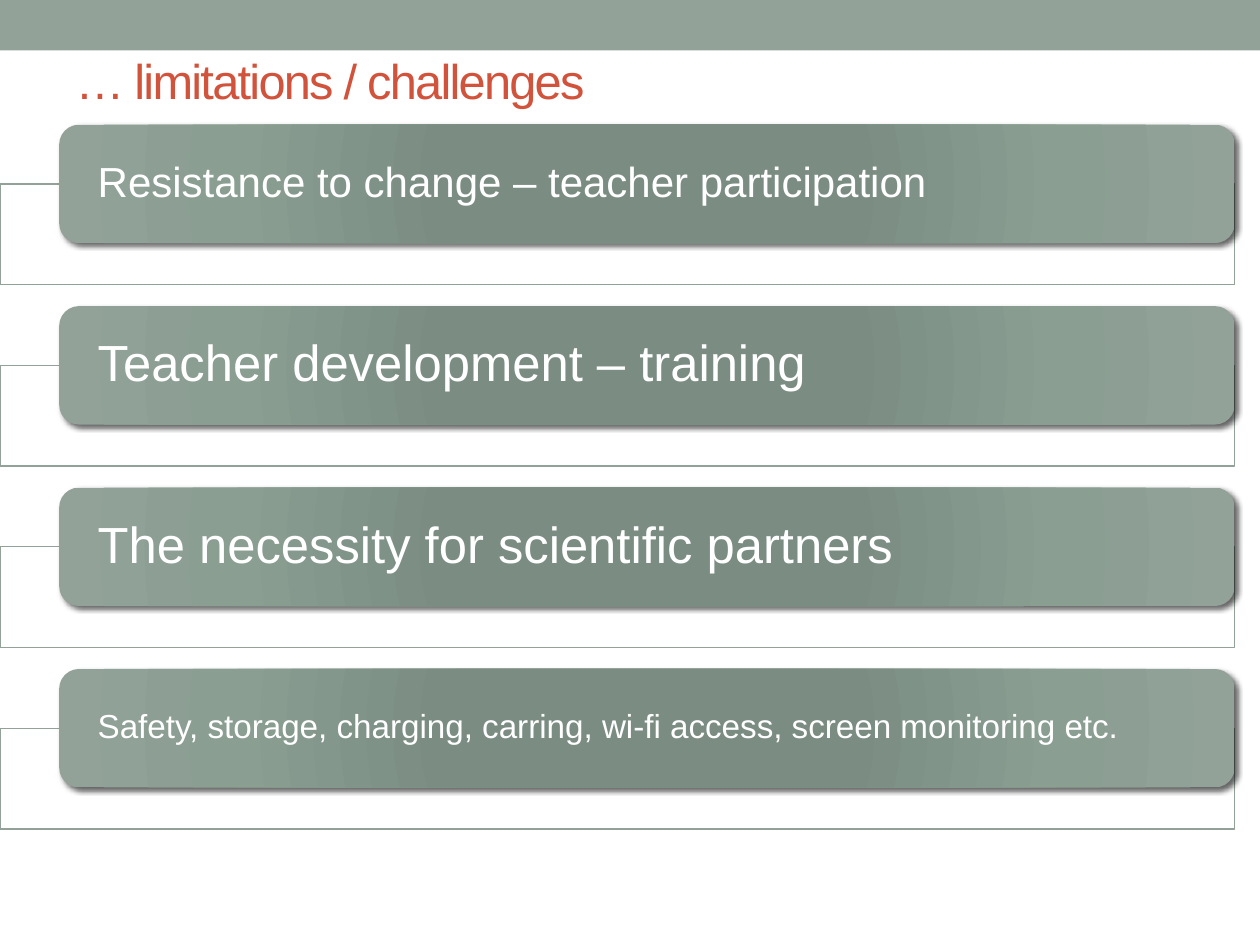
from pptx import Presentation
from pptx.dml.color import RGBColor
from pptx.enum.shapes import MSO_SHAPE as Shape
from pptx.enum.text import MSO_ANCHOR as Anchor, MSO_AUTO_SIZE as AutoSize, PP_ALIGN as Align
from pptx.oxml import parse_xml
from pptx.oxml.ns import nsdecls, qn
from pptx.util import Inches, Pt

COLOURS = {"sage": "93A299", "title": "D2533C", "white": "FFFFFF", "shadow": "000000"}
BAR_GRADIENT = [(0, "7B8E82"), (34, "7B8D83"), (70, "8A9E92"), (100, COLOURS["sage"])]
FONT = "Arial"

CHALLENGES = [
    ("Resistance to change – teacher participation", 24),
    ("Teacher development – training", 29),
    ("The necessity for scientific partners", 29),
    ("Safety, storage, charging, carring, wi-fi access, screen monitoring etc.", 19),
]
FIRST_TOP, ROW_STEP = 0.99, 1.44
FRAME_OFFSET = 0.47  # a frame starts at the middle of its bar


def write_text(shape, text, size, colour, inset=0.1, line_spacing=None, tracking=None):
    """Put one left-aligned, vertically centred line of text into a shape."""
    frame = shape.text_frame
    frame.word_wrap = True
    frame.auto_size = AutoSize.NONE
    frame.vertical_anchor = Anchor.MIDDLE
    frame.margin_left = frame.margin_right = Inches(inset)
    frame.margin_top = frame.margin_bottom = 0
    paragraph = frame.paragraphs[0]
    paragraph.alignment = Align.LEFT
    if line_spacing:
        paragraph.line_spacing = line_spacing
    run = paragraph.add_run()
    run.text = text
    run.font.name = FONT
    run.font.size = Pt(size)
    run.font.color.rgb = RGBColor.from_string(colour)
    if tracking:
        run.font._element.set("spc", str(tracking * 100))


class SlideBuilder:
    """Holds the current slide and draws its elements in one style."""

    def __init__(self, slide):
        self.slide = slide

    def shape(self, kind, left, top, width, height, fill=None, line=None):
        shape = self.slide.shapes.add_shape(
            kind, Inches(left), Inches(top), Inches(width), Inches(height))
        shape.shadow.inherit = False
        if fill:
            shape.fill.solid()
            shape.fill.fore_color.rgb = RGBColor.from_string(fill)
        else:
            shape.fill.background()
        if line:
            shape.line.color.rgb = RGBColor.from_string(line)
            shape.line.width = Pt(0.75)
        else:
            shape.line.fill.background()
        return shape

    def title(self, text):
        title = self.slide.shapes.title
        title.left, title.top = Inches(0.5), Inches(0.36)
        title.width, title.height = Inches(9), Inches(0.55)
        write_text(title, text, 27.9, COLOURS["title"], tracking=-1)

    def frame(self, top):
        frame = self.shape(Shape.RECTANGLE, 0, top, 9.8, 0.8,
                           COLOURS["white"], COLOURS["sage"])
        colour = frame.element.spPr.find(qn("a:solidFill")).find(qn("a:srgbClr"))
        colour.append(parse_xml(f'<a:alpha {nsdecls("a")} val="90000"/>'))

    def bar(self, top, text, size):
        bar = self.shape(Shape.ROUNDED_RECTANGLE, 0.47, top, 9.33, 0.94)
        properties = bar.element.spPr
        # Radial gradient
        stops = "".join(
            f'<a:gs pos="{position * 1000}"><a:srgbClr val="{colour}"/></a:gs>'
            for position, colour in BAR_GRADIENT)
        gradient = parse_xml(
            f'<a:gradFill {nsdecls("a")} rotWithShape="1"><a:gsLst>{stops}</a:gsLst>'
            '<a:path path="circle">'
            '<a:fillToRect l="100000" t="100000" r="100000" b="100000"/>'
            '</a:path></a:gradFill>')
        properties.replace(properties.find(qn("a:noFill")), gradient)
        # Soft shadow to the lower right
        properties.find(qn("a:effectLst")).append(parse_xml(
            f'<a:outerShdw {nsdecls("a")} blurRad="{Pt(3)}" dist="{Pt(2)}" dir="2700000"'
            f' rotWithShape="0"><a:srgbClr val="{COLOURS["shadow"]}">'
            '<a:alpha val="60000"/></a:srgbClr></a:outerShdw>'))
        write_text(bar, text, size, COLOURS["white"], inset=0.26, line_spacing=0.9)


def main():
    presentation = Presentation()
    presentation.slide_width, presentation.slide_height = Inches(10), Inches(7.5)
    builder = SlideBuilder(presentation.slides.add_slide(presentation.slide_layouts[5]))

    # Top band and title
    builder.shape(Shape.RECTANGLE, 0, 0, 10, 0.4, COLOURS["sage"])
    builder.title("… limitations / challenges")

    # One frame and bar per challenge
    for index, (text, size) in enumerate(CHALLENGES):
        top = FIRST_TOP + index * ROW_STEP
        builder.frame(top + FRAME_OFFSET)
        builder.bar(top, text, size)

    presentation.save("out.pptx")


if __name__ == "__main__":
    main()
